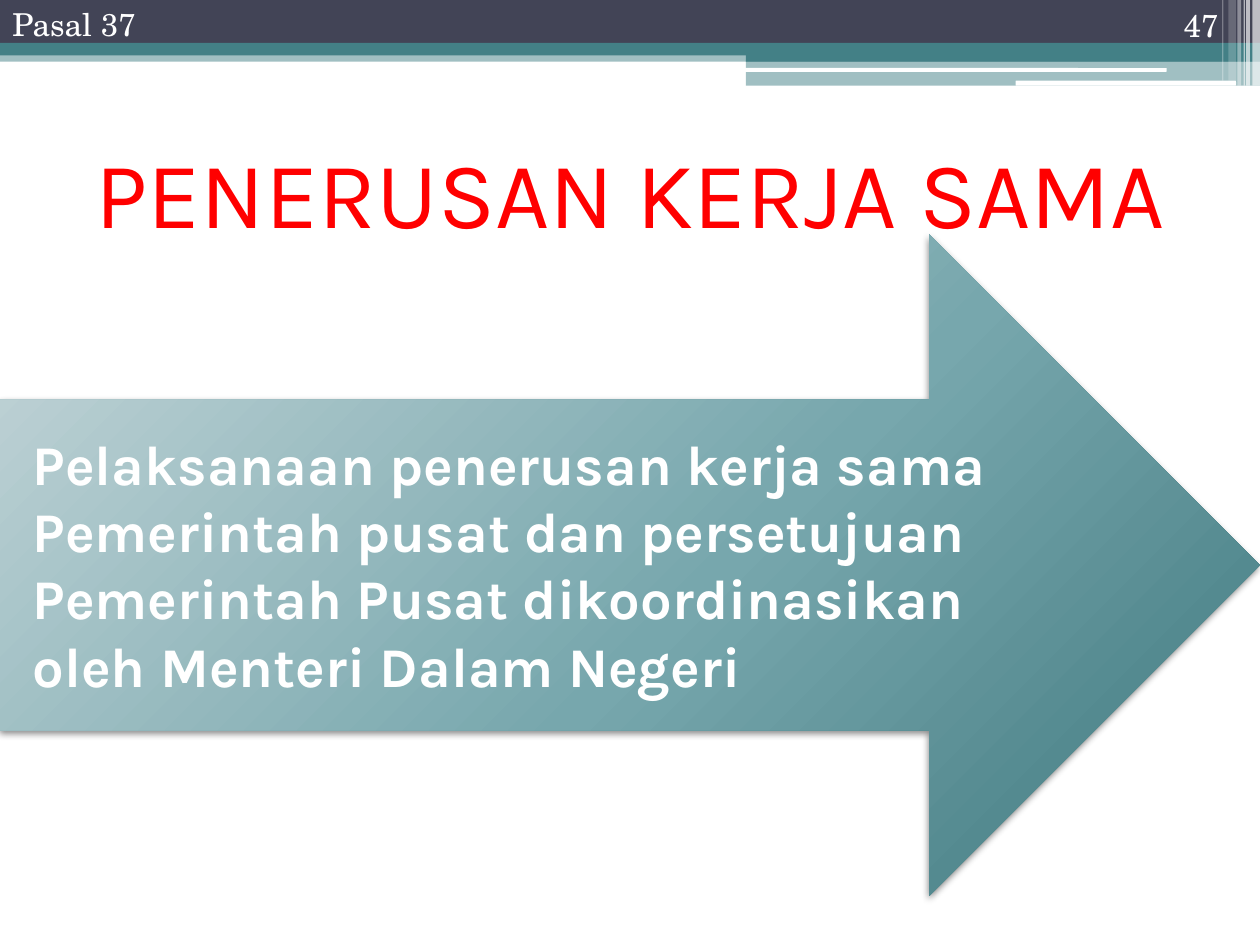
from lxml import etree
from pptx import Presentation
from pptx import util as u
from pptx.dml.color import RGBColor
from pptx.enum import shapes, text
from pptx.oxml import parse_xml
from pptx.oxml.ns import nsdecls, qn

COLORS = {
    "navy": "424456",
    "teal": "438086",
    "white": "FFFFFF",
    "red": "FF0000",
    "pale": "C7D7DA",
    "mid": "77A7AD",
    "deep": "3E777D",
    "black": "000000",
}
BODY_FONT = "Karla"
LABEL_FONT = "TeX Gyre Schola"

presentation = Presentation()
presentation.slide_width = u.Inches(10)
presentation.slide_height = u.Inches(7.5)
column = presentation.slide_width / 10
row = presentation.slide_height / 7.5
slide = presentation.slides.add_slide(presentation.slide_layouts[5])


def grid(left, top, width, height):
    return [round(n * step) for n, step in zip((left, top, width, height), (column, row) * 2)]


def write(shape, wording, font, size, color, align, anchor, bold=False):
    frame = shape.text_frame
    frame.text = wording
    frame.word_wrap = True
    frame.auto_size = text.MSO_AUTO_SIZE.NONE
    frame.vertical_anchor = anchor
    paragraph = frame.paragraphs[0]
    paragraph.alignment = align
    run_font = paragraph.runs[0].font
    run_font.name = font
    run_font.size = u.Pt(size)
    run_font.bold = bold
    run_font.color.rgb = RGBColor.from_string(COLORS[color])


RECTANGLE = shapes.MSO_SHAPE.RECTANGLE
ROUNDED = shapes.MSO_SHAPE.ROUNDED_RECTANGLE
header_bars = [
    (RECTANGLE, (0, 0.4, 10, 0.09), "teal", 50),
    (RECTANGLE, (0, 0, 10, 0.34), "navy", 100),
    (RECTANGLE, (0, 0.34, 10, 0.1), "teal", 100),
    (RECTANGLE, (5.92, 0.39, 4.08, 0.1), "teal", 100),
    (RECTANGLE, (5.92, 0.48, 4.08, 0.2), "teal", 50),
    (ROUNDED, (5.91, 0.54, 3.35, 0.03), "white", 100),
    (ROUNDED, (8.06, 0.64, 1.75, 0.04), "white", 100),
]
edge_stripes = [
    (9.94, 0.06, 0.68, 65),
    (9.89, 0.03, 0.68, 65),
    (9.87, 0.01, 0.68, 60),
    (9.82, 0.03, 0.68, 40),
    (9.75, 0.06, 0.64, 20),
    (9.7, 0.01, 0.64, 30),
]
header_bars += [
    (RECTANGLE, (left, 0, width, height), "white", opacity)
    for left, width, height, opacity in edge_stripes
]
for kind, place, color, opacity in header_bars:
    bar = slide.shapes.add_shape(kind, *grid(*place))
    bar.shadow.inherit = False
    bar.line.fill.background()
    bar.fill.solid()
    bar.fill.fore_color.rgb = RGBColor.from_string(COLORS[color])
    if opacity < 100:
        fill_color = bar.fill._xPr.find(qn("a:solidFill"))[0]
        etree.SubElement(fill_color, qn("a:alpha"), val=str(opacity * 1000))

title = slide.shapes.title
title.left, title.top, title.width, title.height = grid(0.01, 0.93, 9.99, 1.17)
write(title, "PENERUSAN KERJA SAMA", BODY_FONT, 54, "red",
      text.PP_ALIGN.CENTER, text.MSO_ANCHOR.MIDDLE)

arrow = slide.shapes.add_shape(shapes.MSO_SHAPE.RIGHT_ARROW, *grid(0, 1.86, 10, 5.25))
arrow.shadow.inherit = False
arrow.line.fill.background()
arrow.fill.background()
properties = arrow._element.spPr
stops = "".join(
    f'<a:gs pos="{share * 1000}"><a:srgbClr val="{COLORS[color]}"/></a:gs>'
    for share, color in ((0, "pale"), (55, "mid"), (100, "deep"))
)
gradient = parse_xml(
    f'<a:gradFill {nsdecls("a")} rotWithShape="1"><a:gsLst>{stops}</a:gsLst>'
    '<a:path path="circle"><a:fillToRect l="-40000" t="-90000" r="140000" b="190000"/>'
    "</a:path></a:gradFill>"
)
properties.replace(properties.find(qn("a:noFill")), gradient)
shadow = parse_xml(
    f'<a:outerShdw {nsdecls("a")} blurRad="{u.Pt(4)}" dist="{u.Pt(2)}" dir="5400000" '
    f'rotWithShape="0"><a:srgbClr val="{COLORS["black"]}"><a:alpha val="45000"/>'
    "</a:srgbClr></a:outerShdw>"
)
properties.find(qn("a:effectLst")).append(shadow)

labels = [
    ((8.94, 0, 0.83, 0.4), "47", LABEL_FONT, 18, text.PP_ALIGN.RIGHT,
     text.MSO_ANCHOR.BOTTOM, False),
    ((0.16, 3.36, 8.39, 2.26),
     "Pelaksanaan penerusan kerja sama Pemerintah pusat dan persetujuan "
     "Pemerintah Pusat dikoordinasikan oleh Menteri Dalam Negeri",
     BODY_FONT, 32, text.PP_ALIGN.LEFT, text.MSO_ANCHOR.TOP, True),
    ((0, -0.01, 1.8, 0.4), "Pasal 37", LABEL_FONT, 18, text.PP_ALIGN.LEFT,
     text.MSO_ANCHOR.TOP, False),
]
for place, wording, font, size, align, anchor, bold in labels:
    label = slide.shapes.add_textbox(*grid(*place))
    write(label, wording, font, size, "white", align, anchor, bold)

presentation.save("out.pptx")
